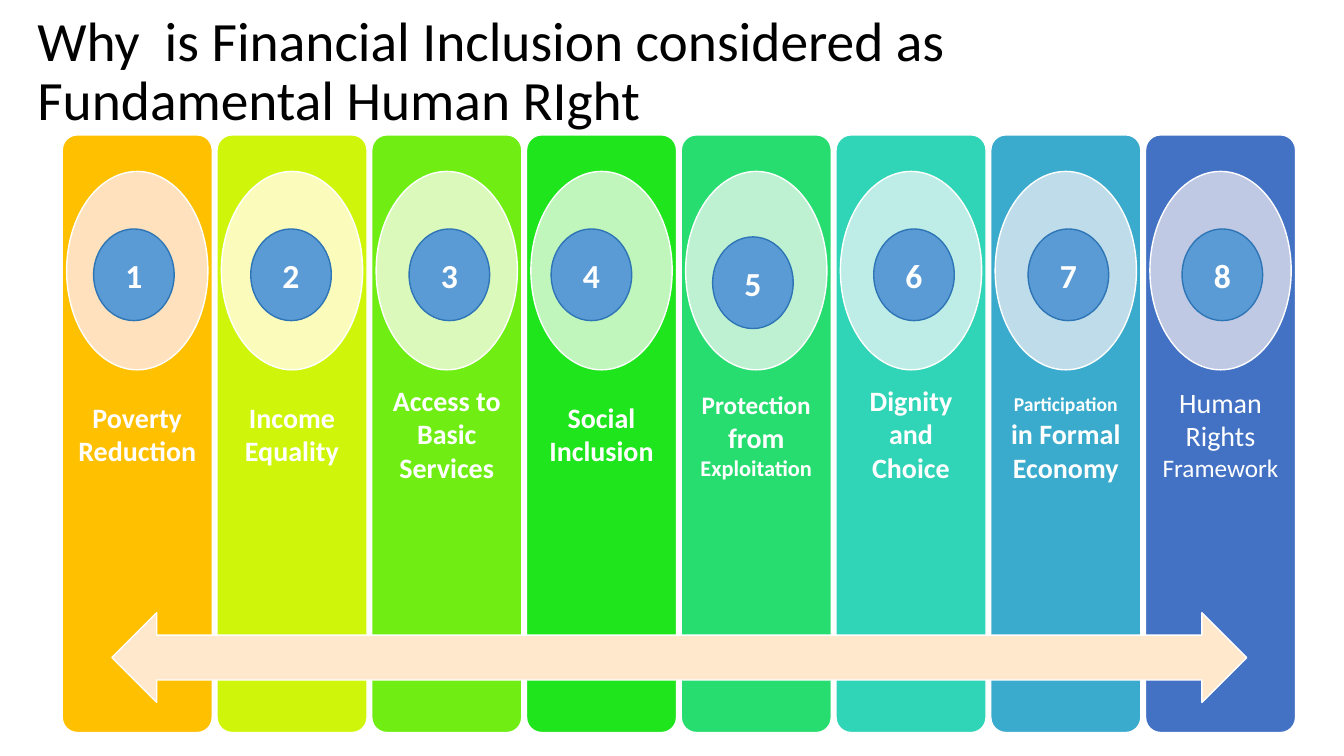
from pptx import Presentation, util as u
from pptx.dml.color import RGBColor
from pptx.enum import shapes, text


class Theme:
    font = "Calibri"
    black, white = "000000", "FFFFFF"
    badge, rim, arrow = "5B9BD5", "2E75B6", "FFE8CC"
    title, number = 39.6, 24
    large, medium, small, tiny = 20, 18, 16, 14


# Bar colour, oval colour, badge left, label runs with sizes
PILLARS = [
    ("FFC000", "FFE2BD", 2.36, [("Poverty Reduction", Theme.large)]),
    ("CFF60A", "FBFCBC", 6.32, [("Income Equality", Theme.large)]),
    ("70EE14", "DCF9BC", 10.31, [("Access to Basic Services", Theme.large)]),
    ("1FE51D", "C0F5BC", 13.89, [("Social Inclusion", Theme.large)]),
    ("27DD70", "BDF1D1", 17.96, [("Protection", Theme.medium), (" from ", Theme.large),
                                 ("Exploitation", Theme.small)]),
    ("30D4B6", "BDEDE6", 22.02, [("Dignity and Choice", Theme.large)]),
    ("3AABCC", "BEDCE9", 25.91, [("Participation", Theme.tiny),
                                 (" in Formal Economy", Theme.large)]),
    ("4372C4", "C0C9E4", 29.79, [("Human Rights ", Theme.large),
                                 ("Framework", Theme.medium)]),
]
LEFT, PITCH = 1.57, 3.9


def draw(kind, left, top, width, height, fill, line=Theme.white):
    shape = slide.shapes.add_shape(kind, u.Cm(left), u.Cm(top), u.Cm(width), u.Cm(height))
    shape.shadow.inherit = False
    shape.fill.solid()
    shape.fill.fore_color.rgb = RGBColor.from_string(fill)
    shape.line.color.rgb = RGBColor.from_string(line)
    shape.line.width = u.Pt(1)
    return shape


def write(shape, runs, color, bold=False, align=text.PP_ALIGN.CENTER, inset=0.0):
    frame = shape.text_frame
    frame.word_wrap = True
    frame.vertical_anchor = text.MSO_ANCHOR.MIDDLE
    frame.margin_left = frame.margin_right = u.Cm(inset)
    para = frame.paragraphs[0]
    para.alignment = align
    para.font.name = Theme.font
    para.font.bold = bold
    para.font.color.rgb = RGBColor.from_string(color)
    para.font.size = u.Pt(runs[0][1])
    for words, size in runs:
        run = para.add_run()
        run.text = words
        if len(runs) > 1:
            run.font.size = u.Pt(size)
    return para


deck = Presentation()
deck.slide_width, deck.slide_height = u.Cm(33.87), u.Cm(19.05)
slide = deck.slides.add_slide(deck.slide_layouts[6])
kinds = shapes.MSO_SHAPE

# Title
title = slide.shapes.add_textbox(u.Cm(0.69), u.Cm(0), u.Cm(29.21), u.Cm(3.68))
head = write(title, [("Why  is Financial Inclusion considered as Fundamental Human RIght",
                      Theme.title)], Theme.black, align=text.PP_ALIGN.LEFT, inset=0.25)
head.line_spacing = 0.9

# Pillars with labels and ovals
for index, (fill, tint, _, label) in enumerate(PILLARS):
    left = LEFT + index * PITCH
    bar = draw(kinds.ROUNDED_RECTANGLE, left, 3.4, 3.78, 15.06, fill)
    bar.adjustments[0] = 0.1
    write(bar, label, Theme.white, bold=index < len(PILLARS) - 1, inset=0.28)
    draw(kinds.OVAL, left + 0.11, 4.32, 3.56, 5, tint)

# Arrow across all pillars
draw(kinds.LEFT_RIGHT_ARROW, 2.82, 15.44, 28.6, 2.26, Theme.arrow)

# Number badges; the fifth sits slightly lower
for number, (_, _, left, _) in enumerate(PILLARS, 1):
    top = 5.97 if number == 5 else 5.77
    badge = draw(kinds.OVAL, left, top, 2.03, 2.31, Theme.badge, Theme.rim)
    write(badge, [(str(number), Theme.number)], Theme.white, bold=True)

deck.save("out.pptx")
